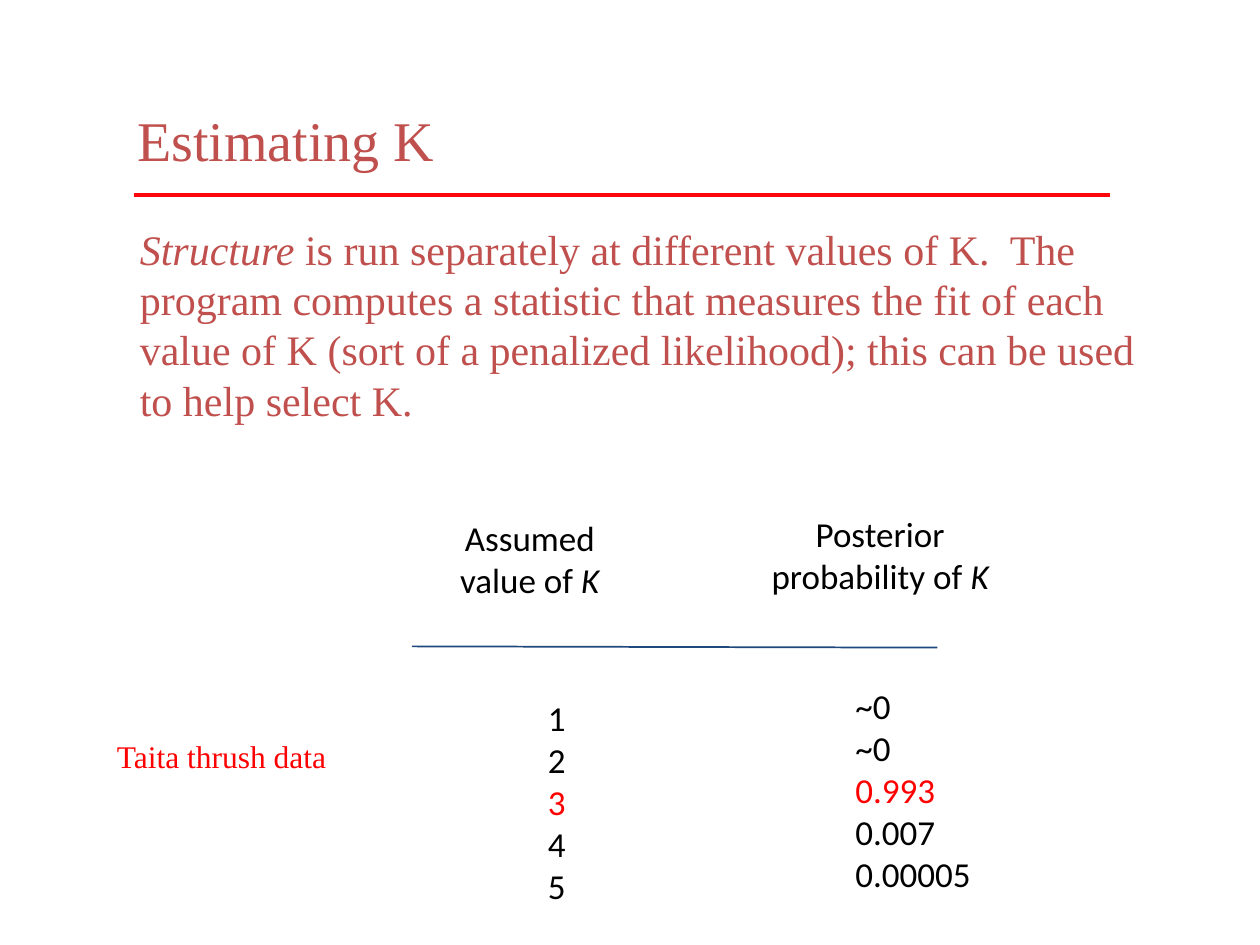
from lxml import etree
from pptx import Presentation
from pptx import util as u
from pptx.dml.color import RGBColor
from pptx.enum import shapes, text
from pptx.oxml import ns

COLORS = {
    "heading": "C0504D",
    "title_rule": "FC060C",
    "highlight": "FF0000",
    "table_rule": "1F497D",
    "plain": "000000",
}
SERIF = "Times New Roman"
SANS = "Calibri"
RESULTS = [("1", "~0"), ("2", "~0"), ("3", "0.993"), ("4", "0.007"), ("5", "0.00005")]
BEST_K = "3"


def color(name):
    return RGBColor.from_string(COLORS[name])


def place(box, left, top, width, height):
    box.left, box.top = u.Inches(left), u.Inches(top)
    box.width, box.height = u.Inches(width), u.Inches(height)


def write(paragraph, words, size=20, font=SANS, fill="plain", italic=False, align=text.PP_ALIGN.LEFT):
    paragraph.alignment = align
    paragraph.space_before = u.Pt(0)
    run = paragraph.add_run()
    run.text = words
    run.font.size = u.Pt(size)
    run.font.name = font
    run.font.italic = italic
    run.font.color.rgb = color(fill)


def add_box(slide, left, top, width, height):
    frame = slide.shapes.add_textbox(*map(u.Inches, (left, top, width, height))).text_frame
    frame.word_wrap = True
    return frame


def add_rule(slide, start, end, fill, weight):
    rule = slide.shapes.add_connector(
        shapes.MSO_CONNECTOR.STRAIGHT, *map(u.Inches, (*start, *end)))
    rule.line.color.rgb = color(fill)
    rule.line.width = u.Pt(weight)
    etree.SubElement(rule._element.spPr, ns.qn("a:effectLst"))


def add_title(slide, words):
    title = slide.shapes.title
    place(title, 0.99, 0.17, 8.18, 1.25)
    title.text_frame.vertical_anchor = text.MSO_ANCHOR.BOTTOM
    write(title.text_frame.paragraphs[0], words, size=32, font=SERIF, fill="heading")


def add_body(slide, program, explanation):
    body = slide.placeholders[1]
    place(body, 0.51, 1.72, 8.9, 5.42)
    body.text_frame.auto_size = text.MSO_AUTO_SIZE.NONE
    paragraph = body.text_frame.paragraphs[0]
    paragraph.level = 1
    properties = paragraph._p.get_or_add_pPr()
    properties.set("marL", str(u.Inches(0.5)))
    properties.set("indent", "0")
    etree.SubElement(properties, ns.qn("a:buNone"))
    write(paragraph, program, size=24, font=SERIF, fill="heading", italic=True)
    write(paragraph, explanation, size=24, font=SERIF, fill="heading")


def add_column_header(slide, words, left, top, width):
    paragraph = add_box(slide, left, top, width, 0.77).paragraphs[0]
    write(paragraph, words, align=text.PP_ALIGN.CENTER)
    write(paragraph, "K", italic=True, align=text.PP_ALIGN.CENTER)


def add_column(slide, column, left, top, width):
    frame = add_box(slide, left, top, width, 1.77)
    for index, result in enumerate(RESULTS):
        paragraph = frame.add_paragraph() if index else frame.paragraphs[0]
        write(paragraph, result[column], fill="highlight" if result[0] == BEST_K else "plain")


def main():
    deck = Presentation()
    deck.slide_width, deck.slide_height = u.Inches(10), u.Inches(7.5)
    slide = deck.slides.add_slide(deck.slide_layouts[1])

    add_title(slide, "Estimating K")
    add_rule(slide, (1.06, 1.55), (8.81, 1.55), "title_rule", 2.25)
    add_body(slide, "Structure",
             " is run separately at different values of K.  The program computes a statistic "
             "that measures the fit of each value of K (sort of a penalized likelihood); "
             "this can be used to help select K.")

    data_label = add_box(slide, 0.83, 5.8, 2.86, 0.86)
    write(data_label.paragraphs[0], "Taita thrush data", size=18, font=SERIF, fill="highlight")

    add_column(slide, 0, 4.25, 5.48, 0.31)
    add_column(slide, 1, 6.69, 5.38, 1.23)
    add_rule(slide, (3.27, 5.13), (7.44, 5.14), "table_rule", 1)
    add_column_header(slide, "Assumed value of ", 3.44, 4.05, 1.53)
    add_column_header(slide, "Posterior probability of ", 5.94, 4.02, 2.09)

    deck.save("out.pptx")


if __name__ == "__main__":
    main()
